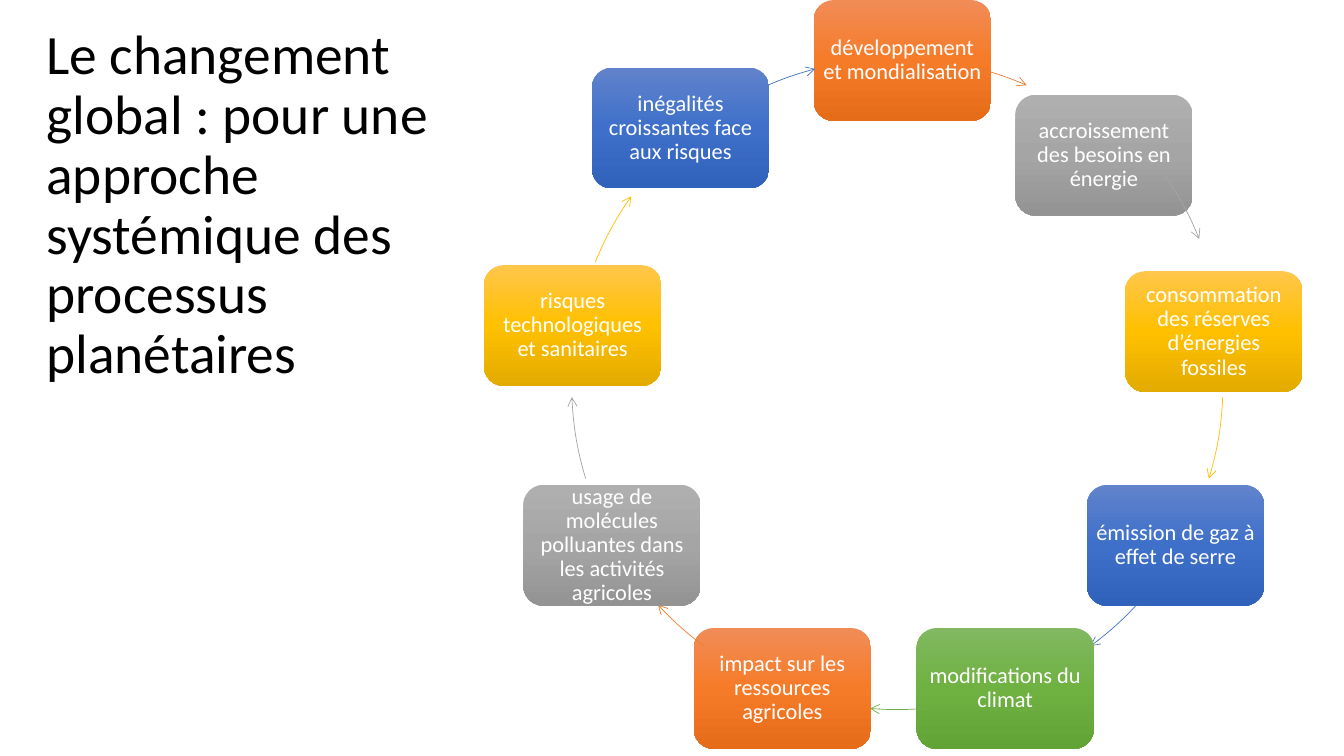
"""Build a slide showing global change as a cycle of nine linked processes."""
from dataclasses import dataclass
from typing import Any

from lxml.etree import SubElement
from pptx import Presentation
from pptx.dml.color import RGBColor as RGB
from pptx.enum.shapes import MSO_SHAPE as Shape
from pptx.enum.text import MSO_ANCHOR as Anchor, MSO_AUTO_SIZE as AutoSize, PP_ALIGN as Align
from pptx.oxml.ns import qn
from pptx.util import Inches, Pt


@dataclass(frozen=True)
class Tint:
    """Gradient stops of a box, top to bottom, and the colour of its arrow."""
    top: str
    middle: str
    bottom: str
    arrow: str


@dataclass(frozen=True)
class Theme:
    """Colours and type sizes of the slide."""
    font: str = "Calibri"
    title_size: float = 39.6
    box_size: float = 16
    arrow_width: float = 0.5
    title_color: str = "000000"
    box_text: str = "FFFFFF"
    orange: Tint = Tint("F18C57", "F67B28", "E56C19", "ED7D31")
    grey: Tint = Tint("AFAFAF", "A5A5A5", "939393", "A5A5A5")
    gold: Tint = Tint("FFC64B", "FFC000", "E3AB00", "FFC000")
    blue: Tint = Tint("6183CB", "3E70CA", "3062BB", "4472C4")
    green: Tint = Tint("81B861", "6FB242", "62A336", "70AD47")


@dataclass(frozen=True)
class Step:
    """A box of the cycle and the arc, in clockwise degrees, that leaves it."""
    text: str
    left: float
    top: float
    tint: Tint
    start: float
    end: float
    ring_top: float = 0.58


THEME = Theme()
TITLE = "Le changement global : pour une approche systémique des processus planétaires"
BOX_W, BOX_H = 1.76, 1.2
RING_LEFT, RING_SIZE = 5.67, 6.46
STEPS = [
    Step("développement et mondialisation", 8.07, 0, THEME.orange, 284.6, 293.4),
    Step("accroissement des besoins en énergie", 10.07, 0.94, THEME.grey, 324.8, 338, 0.35),
    Step("consommation des réserves d’énergies fossiles", 11.16, 2.69, THEME.gold, 2.3, 16.9),
    Step("émission de gaz à effet de serre", 10.78, 4.81, THEME.blue, 42.7, 53.6),
    Step("modifications du climat", 9.09, 6.23, THEME.green, 85.2, 94.8),
    Step("impact sur les ressources agricoles", 6.88, 6.23, THEME.orange, 126.4, 137.3),
    Step("usage de molécules polluantes dans les activités agricoles",
         5.19, 4.81, THEME.grey, 163.1, 177.7),
    Step("risques technologiques et sanitaires", 4.8, 2.63, THEME.gold, 202, 215.2),
    Step("inégalités croissantes face aux risques", 5.87, 0.67, THEME.blue, 246.6, 255.4),
]


def apply(obj: Any, values: dict[str, Any]) -> None:
    """Set each named attribute of an object."""
    for name, value in values.items():
        setattr(obj, name, value)


def write(sp: Any, text: str, size: float, color: str, align: Align, inset: dict[str, Any]) -> None:
    """Put one formatted paragraph in a shape."""
    tf = sp.text_frame
    apply(tf, {"word_wrap": True, "auto_size": AutoSize.NONE,
               "vertical_anchor": Anchor.MIDDLE, **inset})
    p = tf.paragraphs[0]
    apply(p, {"alignment": align, "line_spacing": 0.9})
    r = p.add_run()
    r.text = text
    apply(r.font, {"name": THEME.font, "size": Pt(size)})
    r.font.color.rgb = RGB.from_string(color)


def add_title(s: Any) -> None:
    """Fill and place the title placeholder."""
    sp = s.shapes.title
    apply(sp, {"left": Inches(0.36), "top": Inches(1.32),
               "width": Inches(4.1), "height": Inches(1.45)})
    write(sp, TITLE, THEME.title_size, THEME.title_color, Align.LEFT, {})


def fill_gradient(sp: Any, tint: Tint) -> None:
    """Fill a shape with the three stops of a tint, running downwards."""
    sp.fill.gradient()
    sp.fill.gradient_angle = 270
    stops = sp._element.spPr.find(qn("a:gradFill")).find(qn("a:gsLst"))
    for stop in list(stops):
        stops.remove(stop)
    for pos, color in ((0, tint.top), (50, tint.middle), (100, tint.bottom)):
        stop = SubElement(stops, qn("a:gs"), pos=str(pos * 1000))
        SubElement(stop, qn("a:srgbClr"), val=color)


def add_box(s: Any, step: Step) -> None:
    """Draw the rounded box of a step."""
    sp = s.shapes.add_shape(Shape.ROUNDED_RECTANGLE, Inches(step.left), Inches(step.top),
                            Inches(BOX_W), Inches(BOX_H))
    sp.shadow.inherit = False
    sp.line.fill.background()
    fill_gradient(sp, step.tint)
    sides = ("left", "top", "right", "bottom")
    inset = {f"margin_{side}": Inches(0.02) for side in sides}
    write(sp, step.text, THEME.box_size, THEME.box_text, Align.CENTER, inset)


def add_arrow(s: Any, step: Step) -> None:
    """Draw the arc that leads to the next step."""
    sp = s.shapes.add_shape(Shape.ARC, Inches(RING_LEFT), Inches(step.ring_top),
                            Inches(RING_SIZE), Inches(RING_SIZE))
    for i, angle in enumerate((step.start, step.end)):
        sp.adjustments[i] = angle * 0.6
    sp.shadow.inherit = False
    sp.fill.background()
    sp.line.width = Pt(THEME.arrow_width)
    sp.line.color.rgb = RGB.from_string(step.tint.arrow)
    SubElement(sp._element.spPr.find(qn("a:ln")), qn("a:tailEnd"), type="arrow")


def main() -> None:
    """Build and save the slide."""
    prs = Presentation()
    apply(prs, {"slide_width": Inches(13.33), "slide_height": Inches(7.5)})
    s = prs.slides.add_slide(prs.slide_layouts[5])
    add_title(s)
    for step in STEPS:
        add_box(s, step)
        add_arrow(s, step)
    prs.save("out.pptx")


if __name__ == "__main__":
    main()
